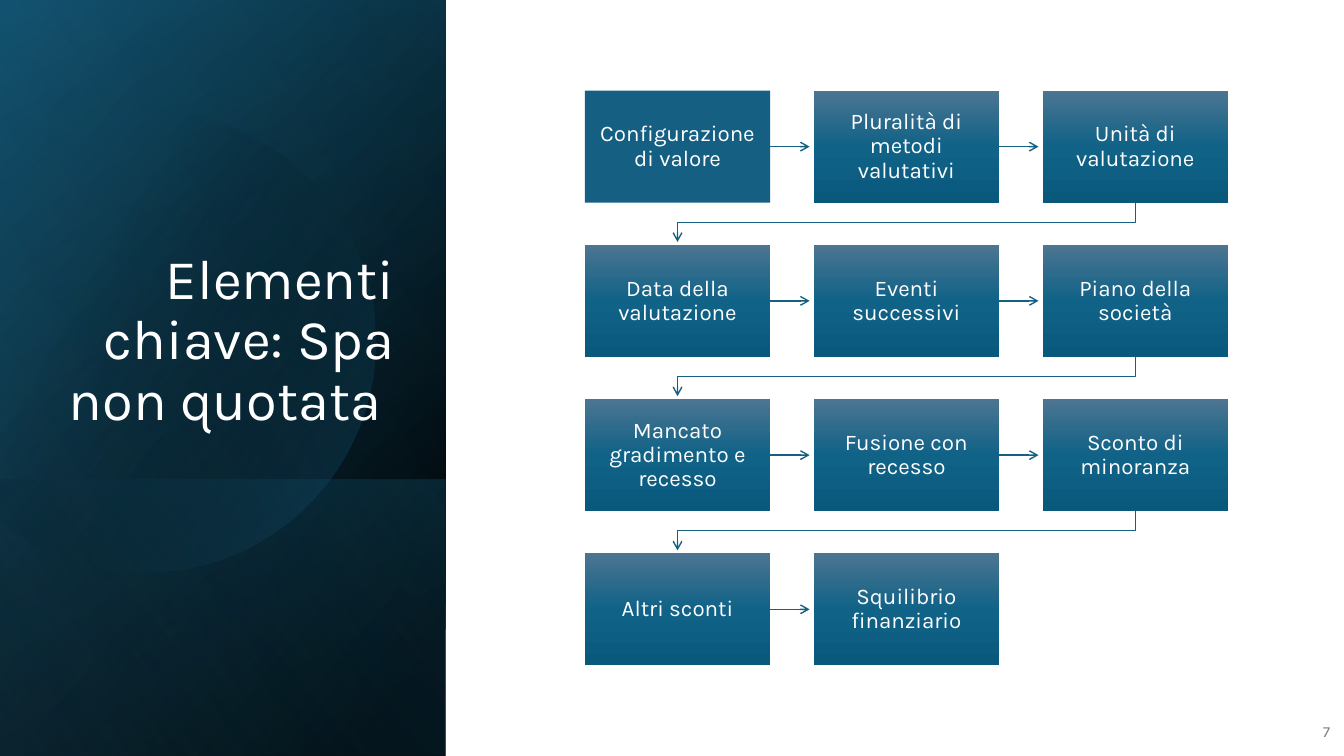
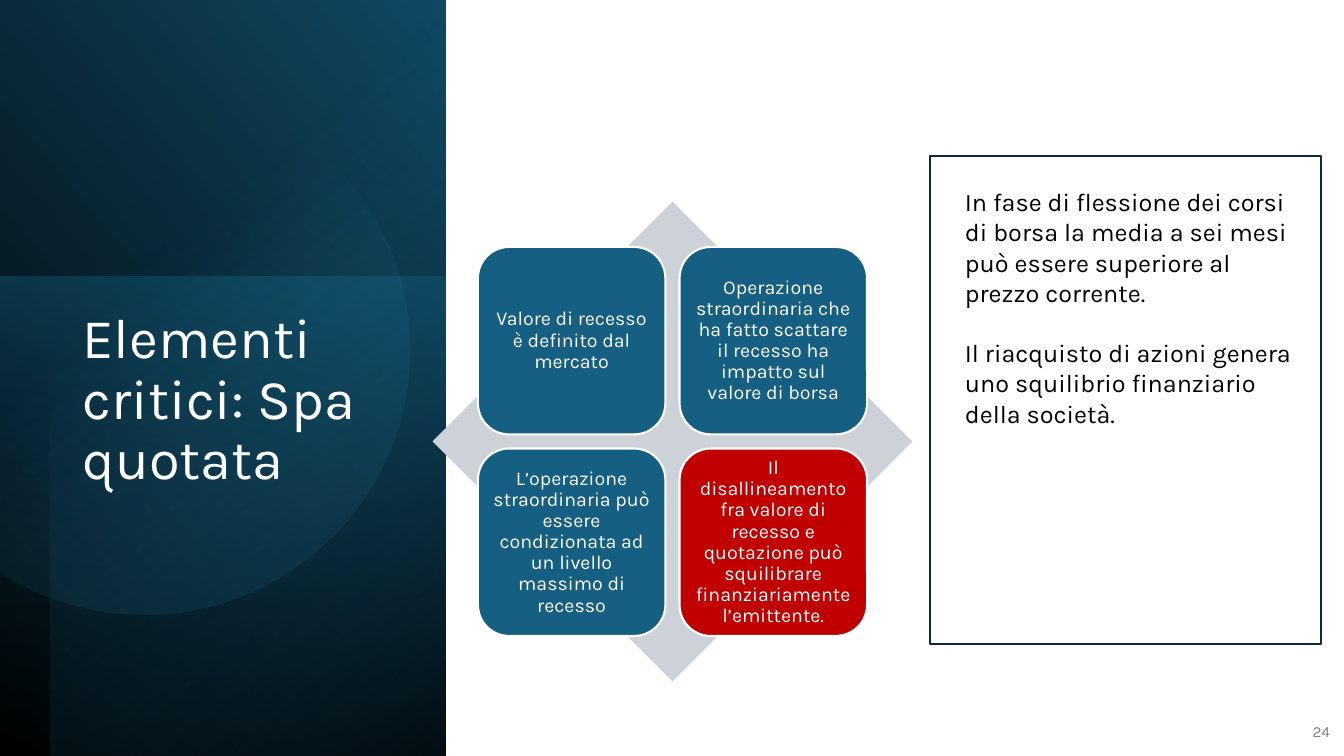
from dataclasses import dataclass
from math import acos, cos, pi, sin

from lxml import etree
from pptx import Presentation
from pptx.dml.color import RGBColor
from pptx.enum.shapes import MSO_CONNECTOR, MSO_SHAPE
from pptx.enum.text import MSO_ANCHOR, PP_ALIGN
from pptx.oxml.ns import qn
from pptx.util import Inches, Pt

RECT, ROUND, DIAMOND = MSO_SHAPE.RECTANGLE, MSO_SHAPE.ROUNDED_RECTANGLE, MSO_SHAPE.DIAMOND
STRAIGHT, ELBOW = MSO_CONNECTOR.STRAIGHT, MSO_CONNECTOR.ELBOW
LEFT, CENTER, RIGHT = PP_ALIGN.LEFT, PP_ALIGN.CENTER, PP_ALIGN.RIGHT
TOP, MIDDLE, BOTTOM = MSO_ANCHOR.TOP, MSO_ANCHOR.MIDDLE, MSO_ANCHOR.BOTTOM


@dataclass(frozen=True)
class Theme:
    font: str = "Karla"
    black: str = "000000"
    white: str = "FFFFFF"
    blue: str = "156082"
    deep: str = "104862"
    night: str = "0B3041"
    sky: str = "46B1E1"
    edge: str = "092A39"
    red: str = "C00000"
    pale: str = "CCD2D8"
    gray: str = "808080"
    title: float = 40
    note: float = 18
    card: float = 16
    tile: float = 14
    page: float = 11


T = Theme()


@dataclass(frozen=True)
class Stop:
    pos: int
    color: str
    alpha: int = 100


@dataclass(frozen=True)
class Panel:
    """A rectangle placed by its visible box, whatever its turn (90 or 270)."""
    left: float
    top: float
    width: float
    height: float
    turn: int
    flip: bool
    angle: int
    stops: tuple[Stop, ...]


@dataclass(frozen=True)
class Disc:
    """A circle cut off at the left edge of the slide."""
    x: float
    y: float
    radius: float
    angle: int
    stops: tuple[Stop, ...]


BAND = 4.42
HIGH = 7.5
CARD = (Stop(0, "4C7591"), Stop(50, "106287"), Stop(100, "09597D"))

FLOW_BAND = (
    Panel(0, 0, BAND, HIGH, 90, True, 50, (Stop(8, T.black), Stop(100, T.deep))),
    Panel(0, 0, BAND, HIGH, 90, True, 30, (Stop(0, T.black, 0), Stop(99, T.blue, 46))),
    Panel(0, 4.76, BAND, 2.74, 90, True, 130, (Stop(2, T.blue, 29), Stop(100, T.black, 30))),
    Disc(1.43, 3.39, 2.29, 30, (Stop(29, T.black, 0), Stop(100, T.blue, 43))),
    Panel(0, 0, BAND, HIGH, 90, True, 120, (Stop(0, T.black, 0), Stop(99, T.sky, 11))),
)
RISK_BAND = (
    Panel(0, 0, BAND, HIGH, 90, True, 310, (Stop(0, T.black), Stop(100, T.deep))),
    Panel(0, 2.74, BAND, 4.76, 270, False, 190, (Stop(0, T.blue, 50), Stop(100, T.night, 0))),
    Panel(0.5, 0, 3.92, HIGH, 270, True, 220, (Stop(0, T.black, 59), Stop(69, T.blue, 0))),
    Disc(1.43, 3.47, 2.63, 52, (Stop(39, T.sky, 0), Stop(100, T.deep, 26))),
)

STEPS = (
    "Configurazione di valore", "Pluralità di metodi valutativi", "Unità di valutazione",
    "Data della valutazione", "Eventi successivi", "Piano della società",
    "Mancato gradimento e recesso", "Fusione con recesso", "Sconto di minoranza",
    "Altri sconti", "Squilibrio finanziario",
)
RISKS = (
    ("Valore di recesso è definito dal mercato", T.blue),
    ("Operazione straordinaria che ha fatto scattare il recesso ha impatto sul valore di borsa",
     T.blue),
    ("L’operazione straordinaria può essere condizionata ad un livello massimo di recesso",
     T.blue),
    ("Il disallineamento fra valore di recesso e quotazione può squilibrare "
     "finanziariamente l’emittente.", T.red),
)
NOTES = (
    "In fase di flessione dei corsi di borsa la media a sei mesi può essere superiore "
    "al prezzo corrente.",
    "Il riacquisto di azioni genera uno squilibrio finanziario della società.",
)


def shade(shape, stops: tuple[Stop, ...], angle: int) -> None:
    """Fill with a linear gradient, its angle clockwise, its stops with alpha."""
    shape.fill.background()
    grad = etree.Element(qn("a:gradFill"), rotWithShape="1")
    items = etree.SubElement(grad, qn("a:gsLst"))
    for stop in stops:
        item = etree.SubElement(items, qn("a:gs"), pos=str(stop.pos * 1000))
        color = etree.SubElement(item, qn("a:srgbClr"), val=stop.color)
        if stop.alpha < 100:
            etree.SubElement(color, qn("a:alpha"), val=str(stop.alpha * 1000))
    etree.SubElement(grad, qn("a:lin"), ang=str(angle * 60000), scaled="0")
    props = shape._element.spPr
    props.replace(props.find(qn("a:noFill")), grad)


def style(shape, fill: str | None = None, line: str | None = None) -> None:
    shape.shadow.inherit = False
    if fill:
        shape.fill.solid()
        shape.fill.fore_color.rgb = RGBColor.from_string(fill)
    else:
        shape.fill.background()
    if line:
        shape.line.color.rgb = RGBColor.from_string(line)
        shape.line.width = Pt(1.5)
    else:
        shape.line.fill.background()


def block(slide, kind, left: float, top: float, width: float, height: float,
          fill: str | None = None, line: str | None = None):
    shape = slide.shapes.add_shape(
        kind, Inches(left), Inches(top), Inches(width), Inches(height))
    style(shape, fill, line)
    return shape


def write(shape, *texts: str, size: float, color: str = T.white, align=CENTER,
          anchor=MIDDLE, lead: float = 0.9, gap: float = 0,
          pads: tuple[float, float, float, float] = (0.1, 0.05, 0.1, 0.05)) -> None:
    """Set one paragraph per text; pads run left, top, right, bottom."""
    frame = shape.text_frame
    frame.word_wrap = True
    frame.vertical_anchor = anchor
    (frame.margin_left, frame.margin_top,
     frame.margin_right, frame.margin_bottom) = map(Inches, pads)
    for i, text in enumerate(texts):
        para = frame.paragraphs[0] if i == 0 else frame.add_paragraph()
        para.alignment = align
        para.line_spacing = lead
        if i:
            para.space_before = Pt(gap)
        run = para.add_run()
        run.text = text
        run.font.name = T.font
        run.font.size = Pt(size)
        run.font.color.rgb = RGBColor.from_string(color)


def label(slide, text: str, left: float, top: float, width: float, height: float,
          **form) -> None:
    box = slide.shapes.add_textbox(
        Inches(left), Inches(top), Inches(width), Inches(height))
    write(box, text, **form)


def arrow(slide, kind, x: float, y: float, width: float, height: float, turn: int = 0) -> None:
    line = slide.shapes.add_connector(
        kind, Inches(x), Inches(y), Inches(x + width), Inches(y + height))
    line.line.color.rgb = RGBColor.from_string(T.blue)
    line.line.width = Pt(1)
    etree.SubElement(line.line._get_or_add_ln(), qn("a:tailEnd"), type="arrow")
    props = line._element.spPr
    etree.SubElement(props, qn("a:effectLst"))
    if turn:
        props.find(qn("a:xfrm")).set("rot", str(turn * 60000))


def elbow(slide, x: float, y: float, width: float, height: float) -> None:
    """Go down, left and down again from the right end, as a quarter-turned connector."""
    left = x + (width - height) / 2
    top = y + (height - width) / 2
    arrow(slide, ELBOW, left, top, height, width, 90)


def panel(slide, part: Panel) -> None:
    mid_x, mid_y = part.left + part.width / 2, part.top + part.height / 2
    shape = block(slide, RECT, mid_x - part.height / 2, mid_y - part.width / 2,
                  part.height, part.width)
    shape.rotation = part.turn
    if part.flip:
        shape._element.spPr.find(qn("a:xfrm")).set("flipH", "1")
    shade(shape, part.stops, part.angle)


def disc(slide, part: Disc, count: int = 120) -> None:
    reach = acos(-part.x / part.radius) if part.x < part.radius else pi
    turns = [reach * (2 * i / count - 1) for i in range(count + 1)]
    dots = [(Inches(part.x + part.radius * cos(t)), Inches(part.y + part.radius * sin(t)))
            for t in turns]
    path = slide.shapes.build_freeform(*dots[0])
    path.add_line_segments(dots[1:], close=True)
    shape = path.convert_to_shape()
    style(shape)
    shade(shape, part.stops, part.angle)


def start(deck, band: tuple[Panel | Disc, ...], page: int):
    """Add a blank slide with its dark band and page number."""
    slide = deck.slides.add_slide(deck.slide_layouts[6])
    for part in band:
        if isinstance(part, Panel):
            panel(slide, part)
        else:
            disc(slide, part)
    label(slide, str(page), 12.8, 7.06, 0.49, 0.4, size=T.page, color=T.gray,
          align=RIGHT, lead=1)
    return slide


def flow(deck) -> None:
    slide = start(deck, FLOW_BAND, 7)
    label(slide, "Elementi chiave: Spa non quotata ", 0.51, 0.64, 3.5, 3.7,
          size=T.title, align=RIGHT, anchor=BOTTOM)
    left, top, width, height = 5.8, 0.9, 1.84, 1.11
    step_x, step_y, columns, reach = 2.27, 1.53, 3, 0.39
    for i, text in enumerate(STEPS):
        row, col = divmod(i, columns)
        x, y = left + col * step_x, top + row * step_y
        card = block(slide, RECT, x, y, width, height, T.blue)
        if i:
            shade(card, CARD, 90)
        write(card, text, size=T.card, pads=(0.09,) * 4)
        if i == len(STEPS) - 1:
            continue
        if col < columns - 1:
            arrow(slide, STRAIGHT, x + width, y + height / 2, reach, 0)
        else:
            elbow(slide, left + width / 2, y + height, col * step_x, reach)


def risks(deck) -> None:
    slide = start(deck, RISK_BAND, 24)
    label(slide, "Elementi critici: Spa quotata", 0.72, 3.03, 3.15, 3.36,
          size=T.title, align=LEFT, anchor=TOP)
    block(slide, DIAMOND, 4.29, 2, 4.76, 4.76, T.pale)
    for i, (text, fill) in enumerate(RISKS):
        row, col = divmod(i, 2)
        tile = block(slide, ROUND, 4.74 + 2 * col, 2.45 + 2 * row, 1.86, 1.86, fill, T.white)
        write(tile, text, size=T.tile, pads=(0.06,) * 4)
    note = block(slide, RECT, 9.22, 1.55, 3.88, 4.84, line=T.edge)
    write(note, *NOTES, size=T.note, color=T.black, align=LEFT, anchor=TOP, lead=1,
          gap=21.5, pads=(0.35, 0.3, 0.1, 0.05))


def main() -> None:
    deck = Presentation()
    deck.slide_width, deck.slide_height = Inches(13.33), Inches(HIGH)
    flow(deck)
    risks(deck)
    deck.save("out.pptx")


if __name__ == "__main__":
    main()
